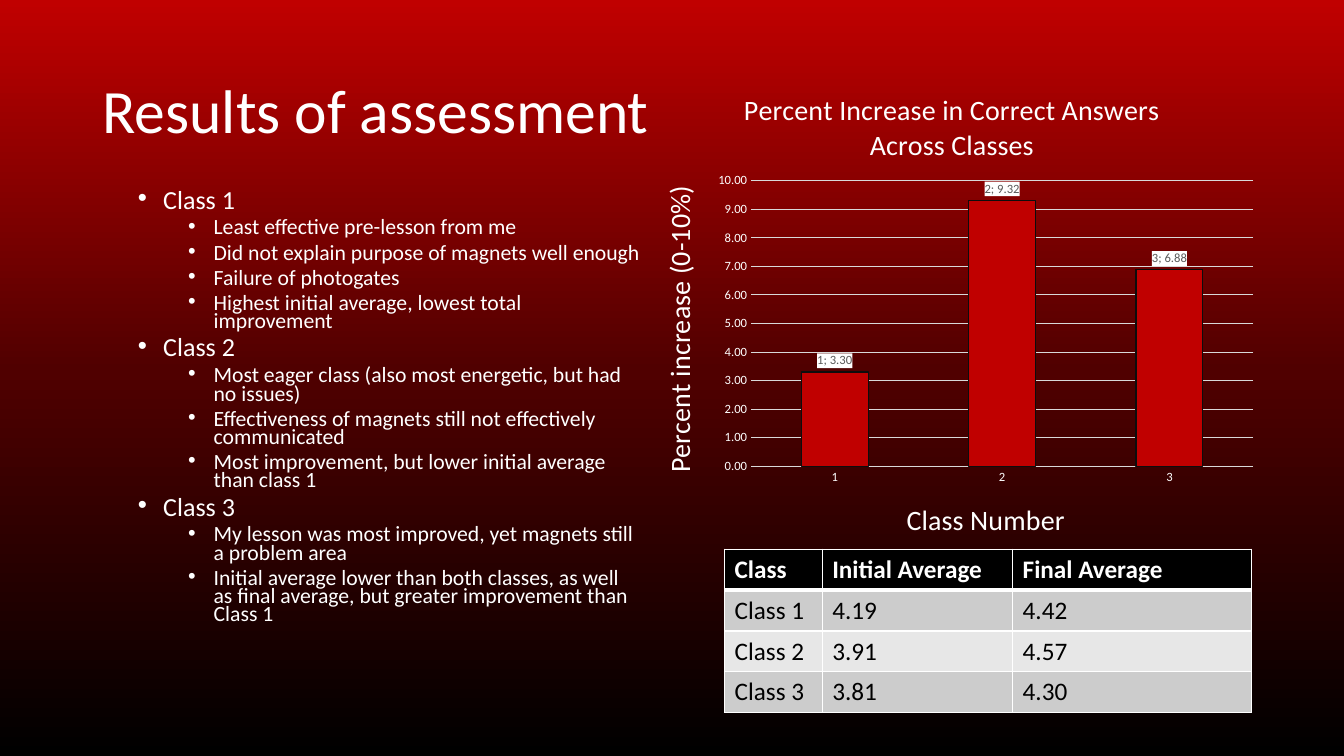
from lxml.etree import SubElement
from pptx import Presentation
from pptx.chart.data import CategoryChartData
from pptx.dml.color import RGBColor
from pptx.enum.chart import XL_CHART_TYPE as ChartType
from pptx.enum.chart import XL_LABEL_POSITION as LabelPosition
from pptx.enum.chart import XL_TICK_MARK as TickMark
from pptx.enum.text import MSO_ANCHOR as Anchor
from pptx.enum.text import MSO_AUTO_SIZE as AutoSize
from pptx.enum.text import PP_ALIGN as Align
from pptx.oxml import parse_xml
from pptx.oxml.ns import nsdecls, qn
from pptx.util import Cm, Pt

WHITE, BLACK, RED = "FFFFFF", "000000", "C00000"

FINDINGS = {
    "Class 1": [
        "Least effective pre-lesson from me",
        "Did not explain purpose of magnets well enough",
        "Failure of photogates",
        "Highest initial average, lowest total improvement",
    ],
    "Class 2": [
        "Most eager class (also most energetic, but had no issues)",
        "Effectiveness of magnets still not effectively communicated",
        "Most improvement, but lower initial average than class 1",
    ],
    "Class 3": [
        "My lesson was most improved, yet magnets still a problem area",
        "Initial average lower than both classes, as well as final average, "
        "but greater improvement than Class 1",
    ],
}
AVERAGES = [
    ["Class", "Initial Average", "Final Average"],
    ["Class 1", "4.19", "4.42"],
    ["Class 2", "3.91", "4.57"],
    ["Class 3", "3.81", "4.30"],
]
INCREASES = {"1": 3.3, "2": 9.32, "3": 6.88}


def rgb(color):
    return RGBColor.from_string(color)


class AssessmentSlide:
    font_name = "Calibri"

    def __init__(self, deck):
        self.slide = deck.slides.add_slide(deck.slide_layouts[1])

    def style(self, font, size, color=WHITE, bold=False):
        font.name, font.size, font.bold = self.font_name, Pt(size), bold
        font.color.rgb = rgb(color)

    def place(self, holder, left, top, width, height):
        holder.left, holder.top = Cm(left), Cm(top)
        holder.width, holder.height = Cm(width), Cm(height)
        holder.text_frame.auto_size = AutoSize.NONE
        holder.text_frame.word_wrap = True

    def background(self, stops):
        fill = self.slide.background.fill
        fill.gradient()
        fill.gradient_angle = 270
        stop_list = self.slide.element.find(".//" + qn("a:gsLst"))
        for old_stop in list(stop_list):
            stop_list.remove(old_stop)
        for percent, color in stops:
            stop = SubElement(stop_list, qn("a:gs"), pos=str(percent * 1000))
            SubElement(stop, qn("a:srgbClr"), val=color)

    def title(self, text, *box):
        heading = self.slide.shapes.title
        self.place(heading, *box)
        heading.text_frame.text = text
        heading.text_frame.vertical_anchor = Anchor.MIDDLE
        line = heading.text_frame.paragraphs[0]
        line.alignment, line.line_spacing = Align.LEFT, 0.9
        self.style(line.runs[0].font, 44)

    def bullets(self, groups, *box):
        body = self.slide.placeholders[1]
        self.place(body, *box)
        frame = body.text_frame
        frame.vertical_anchor = Anchor.TOP
        items = []
        for heading, details in groups.items():
            items += [(heading, 1, 18.6, 1.9)]
            items += [(detail, 2, 15.5, 3.17) for detail in details]
        frame.text = "\n".join(item[0] for item in items)
        for line, (_, level, size, indent) in zip(frame.paragraphs, items):
            line.level, line.line_spacing = level, 0.7
            line.space_before, line.space_after = Pt(5), Pt(0)
            self.style(line.runs[0].font, size)
            props = line._p.get_or_add_pPr()
            props.set("marL", str(Cm(indent)))
            props.set("indent", str(-Cm(0.64)))
            SubElement(props, qn("a:buFont"), typeface="Arial")
            SubElement(props, qn("a:buChar"), char="•")

    def heading(self, owner, text):
        """Give a chart or an axis its title."""
        owner.has_title = True
        title = owner.chart_title if hasattr(owner, "chart_title") else owner.axis_title
        title.text_frame.text = text
        self.style(title.text_frame.paragraphs[0].runs[0].font, 20)
        return title.text_frame

    def chart(self, name, values, cat_title, val_title, *box):
        data = CategoryChartData(number_format="0.00")
        data.categories = list(values)
        data.add_series("Series 1", list(values.values()))
        chart = self.slide.shapes.add_chart(
            ChartType.COLUMN_CLUSTERED, *map(Cm, box), data).chart
        self.style(chart.font, 10, BLACK)
        chart.has_legend = False
        self.heading(chart, name)
        chart.chart_title.include_in_layout = False

        # Axes
        for axis, text in ((chart.category_axis, cat_title),
                           (chart.value_axis, val_title)):
            title_frame = self.heading(axis, text)
            axis.major_tick_mark = axis.minor_tick_mark = TickMark.NONE
            axis.format.line.fill.background()
            self.style(axis.tick_labels.font, 9)
        turned = title_frame._txBody.bodyPr
        turned.set("rot", "-5400000")
        turned.set("vert", "horz")
        scale = chart.value_axis
        scale.minimum_scale, scale.maximum_scale, scale.major_unit = 0, 10, 1
        scale.tick_labels.number_format = "0.00"
        scale.tick_labels.number_format_is_linked = False
        grid = scale.major_gridlines.format.line
        grid.color.rgb, grid.width = rgb("D9D9D9"), Pt(0.75)

        # Columns and their labels
        plot = chart.plots[0]
        plot.gap_width, plot.vary_by_categories = 150, False
        columns = plot.series[0]
        columns.format.fill.solid()
        columns.format.fill.fore_color.rgb = rgb(RED)
        columns.format.line.color.rgb = rgb("0D0D0D")
        columns.format.line.width = Pt(0.75)
        labels = columns.data_labels
        labels.show_value = labels.show_category_name = True
        labels.number_format, labels.number_format_is_linked = "0.00", False
        labels.position = LabelPosition.OUTSIDE_END
        self.style(labels.font, 9, "595959")
        labels._element.find(qn("c:txPr")).addprevious(parse_xml(
            f'<c:spPr {nsdecls("c", "a")}><a:solidFill>'
            f'<a:srgbClr val="{WHITE}"/></a:solidFill></c:spPr>'))

        # Plot area as fractions of the chart
        area = chart._chartSpace.chart.plotArea
        for old_layout in area.findall(qn("c:layout")):
            area.remove(old_layout)
        layout = parse_xml(f'<c:layout {nsdecls("c")}><c:manualLayout/></c:layout>')
        for tag, value in (("layoutTarget", "inner"), ("xMode", "edge"),
                           ("yMode", "edge"), ("x", 0.18), ("y", 0.225),
                           ("w", 0.8), ("h", 0.577)):
            SubElement(layout[0], qn("c:" + tag), val=str(value))
        area.insert(0, layout)

    def table(self, rows, left, top, widths, row_height):
        table = self.slide.shapes.add_table(
            len(rows), len(widths), Cm(left), Cm(top),
            Cm(sum(widths)), Cm(row_height * len(rows))).table
        for column, width in zip(table.columns, widths):
            column.width = Cm(width)
        for r, texts in enumerate(rows):
            table.rows[r].height = Cm(row_height)
            is_header = r == 0
            shade = BLACK if is_header else ("E7E7E7", "CCCCCC")[r % 2]
            for c, text in enumerate(texts):
                cell = table.cell(r, c)
                cell.text = text
                self.style(cell.text_frame.paragraphs[0].runs[0].font, 18,
                           WHITE if is_header else BLACK, is_header)
                self.borders(cell, 3 if r == 1 else 1, 3 if is_header else 1)
                cell.fill.solid()
                cell.fill.fore_color.rgb = rgb(shade)

    def borders(self, cell, top, bottom):
        props = cell._tc.get_or_add_tcPr()
        for side, width in (("L", 1), ("R", 1), ("T", top), ("B", bottom)):
            edge = SubElement(props, qn("a:ln" + side), w=str(Pt(width)))
            SubElement(SubElement(edge, qn("a:solidFill")), qn("a:srgbClr"), val=WHITE)


def main():
    deck = Presentation()
    deck.slide_width, deck.slide_height = Cm(33.87), Cm(19.05)
    results = AssessmentSlide(deck)
    results.background([(0, RED), (49, "500000"), (100, BLACK)])
    results.title("Results of assessment", 2.33, 1.02, 29.21, 3.68)
    results.chart("Percent Increase in Correct Answers Across Classes", INCREASES,
                  "Class Number", "Percent increase (0-10%)",
                  16.08, 1.75, 15.82, 12.47)
    results.bullets(FINDINGS, 1.96, 4.7, 14.48, 12.09)
    results.table(AVERAGES, 18.26, 13.84, [2.46, 4.8, 6.02], 1.03)
    deck.save("out.pptx")


if __name__ == "__main__":
    main()
